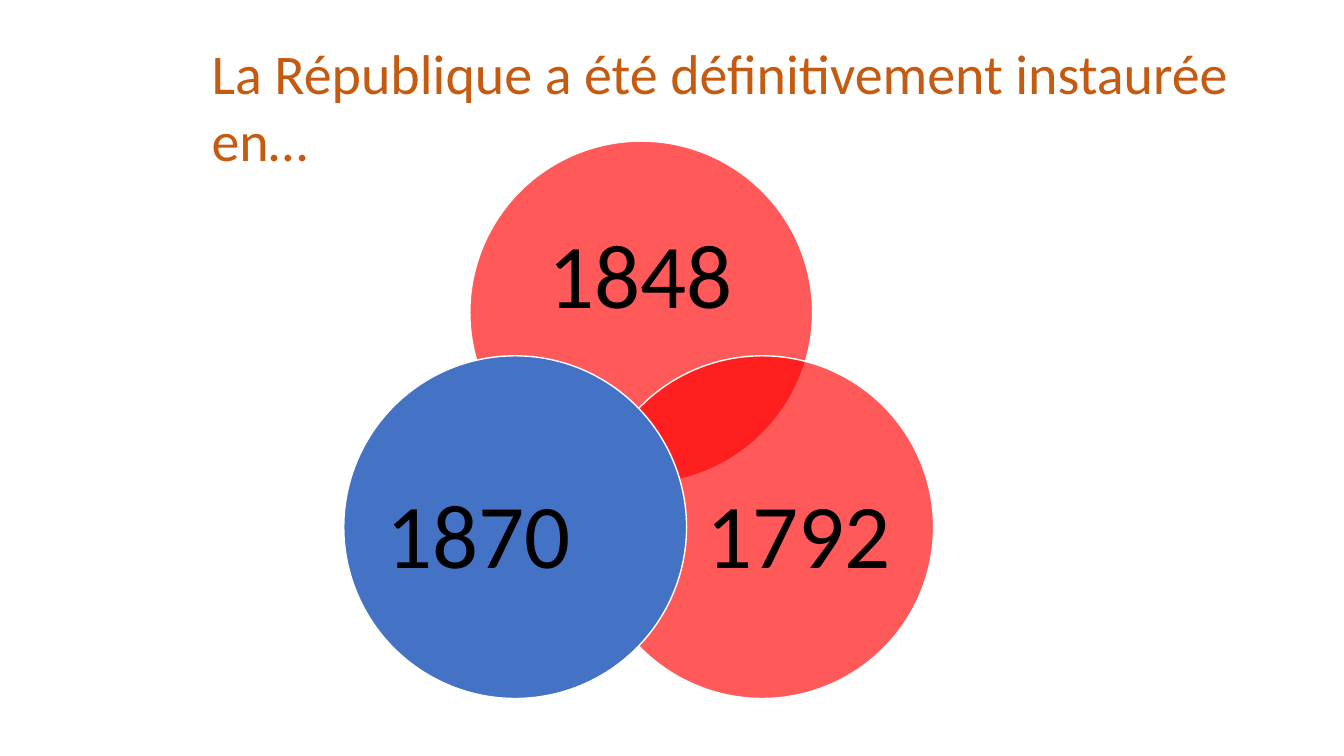
from dataclasses import dataclass

import pptx
import pptx.dml.color
import pptx.enum.shapes
import pptx.enum.text
import pptx.oxml
import pptx.oxml.ns
import pptx.shapes.autoshape
import pptx.shapes.shapetree
import pptx.util
from pptx.util import Inches

SIZE = 3.4


@dataclass(frozen=True)
class Box:
    left: float
    top: float
    width: float
    height: float


@dataclass(frozen=True)
class Disc:
    year: str
    left: float
    top: float
    fill: str
    alpha: int
    label: Box


DISCS = [
    Disc("1848", 4.66, 1.4, "FF0000", 65, Box(5.11, 2, 2.49, 1.53)),
    Disc("1792", 5.86, 3.53, "FF0000", 65, Box(6.9, 4.41, 2.04, 1.87)),
    Disc("1870", 3.41, 3.53, "4472C4", 100, Box(3.73, 4.41, 2.04, 1.87)),
]


def color(code: str) -> pptx.dml.color.RGBColor:
    return pptx.dml.color.RGBColor.from_string(code)


def add_text(
    shapes, box: Box, text: str, size: float, code: str
) -> pptx.shapes.autoshape.Shape:
    shape = shapes.add_textbox(
        Inches(box.left), Inches(box.top), Inches(box.width), Inches(box.height)
    )
    frame = shape.text_frame
    frame.text = text
    frame.word_wrap = True
    font = frame.paragraphs[0].runs[0].font
    font.name = "Calibri"
    font.size = pptx.util.Pt(size)
    font.color.rgb = color(code)
    return shape


def add_label(shapes, disc: Disc) -> None:
    frame = add_text(shapes, disc.label, disc.year, 65, "000000").text_frame
    frame.margin_left = frame.margin_right = Inches(0)
    frame.margin_top = frame.margin_bottom = Inches(0)
    frame.vertical_anchor = pptx.enum.text.MSO_ANCHOR.MIDDLE
    para = frame.paragraphs[0]
    para.alignment = pptx.enum.text.PP_ALIGN.CENTER
    para.line_spacing = 0.9


def add_disc(shapes, disc: Disc) -> None:
    shape = shapes.add_shape(
        pptx.enum.shapes.MSO_SHAPE.OVAL,
        Inches(disc.left), Inches(disc.top), Inches(SIZE), Inches(SIZE),
    )
    shape.shadow.inherit = False
    shape.fill.solid()
    shape.fill.fore_color.rgb = color(disc.fill)
    shape.line.color.rgb = color("FFFFFF")
    shape.line.width = pptx.util.Pt(1)
    if disc.alpha < 100:
        fill = shape.fill._xPr.find(pptx.oxml.ns.qn("a:solidFill"))
        alpha = pptx.oxml.parse_xml(
            f'<a:alpha {pptx.oxml.ns.nsdecls("a")} val="{disc.alpha * 1000}"/>'
        )
        fill[0].append(alpha)
    add_label(shapes, disc)


def main() -> None:
    deck = pptx.Presentation()
    deck.slide_width = Inches(13.33)
    deck.slide_height = Inches(7.5)
    slide = deck.slides.add_slide(deck.slide_layouts[6])
    group = slide.shapes.add_group_shape()
    for disc in DISCS:
        add_disc(group.shapes, disc)
    title = add_text(
        slide.shapes,
        Box(2, 0.33, 10.67, 1.45),
        "La République a été définitivement instaurée en…",
        40,
        "C55A11",
    )
    title.text_frame.auto_size = pptx.enum.text.MSO_AUTO_SIZE.SHAPE_TO_FIT_TEXT
    deck.save("out.pptx")


if __name__ == "__main__":
    main()
